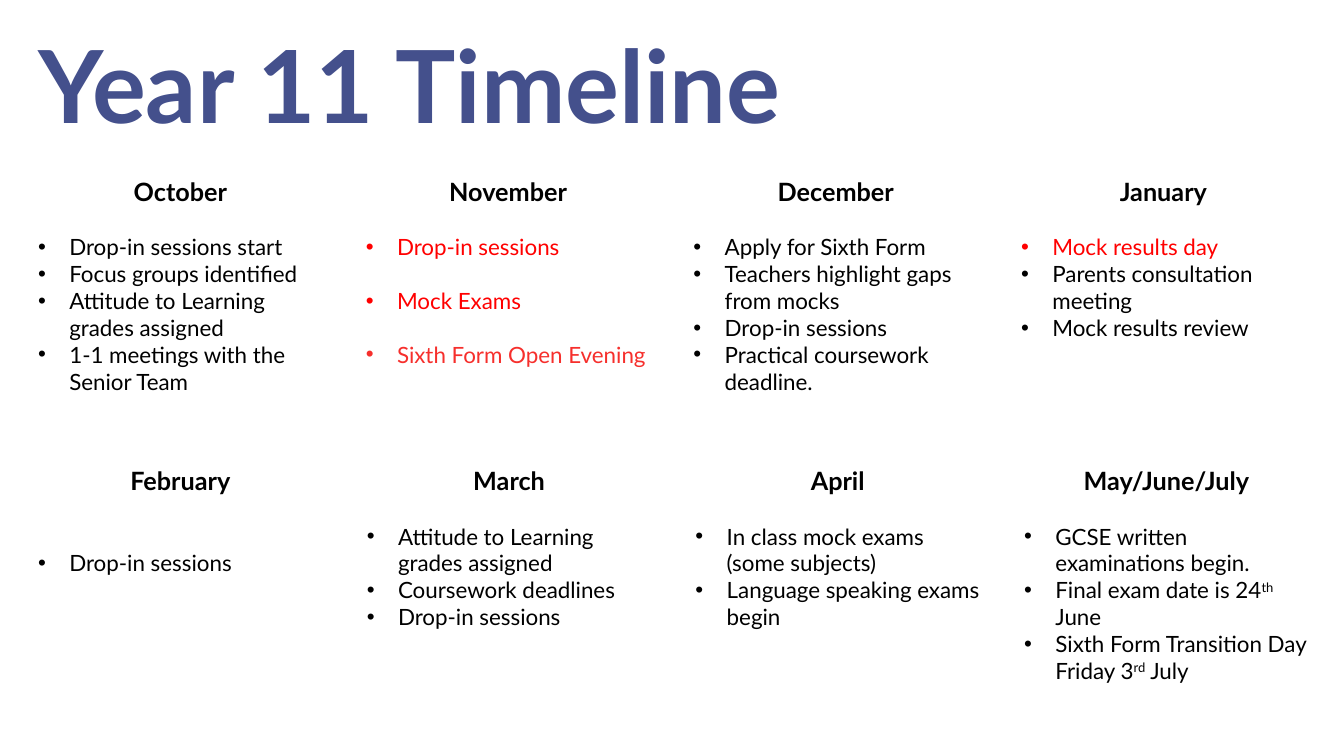
from dataclasses import dataclass

from lxml import etree
from pptx import Presentation
from pptx.dml.color import RGBColor
from pptx.enum.shapes import MSO_SHAPE
from pptx.enum.text import MSO_ANCHOR, PP_ALIGN
from pptx.oxml.ns import qn
from pptx.util import Inches, Pt

RECTANGLE = MSO_SHAPE.RECTANGLE
TOP, MIDDLE = MSO_ANCHOR.TOP, MSO_ANCHOR.MIDDLE
LEFT, CENTER = PP_ALIGN.LEFT, PP_ALIGN.CENTER


@dataclass(frozen=True)
class Theme:
    font: str = "Lato"
    title_color: str = "44508C"
    text_color: str = "000000"
    alert_color: str = "FF0000"
    event_color: str = "F62F2C"
    card_color: str = "FFFFFF"
    title_size: float = 72
    month_size: float = 18
    item_size: float = 16
    blank_line: float = 19.2


THEME = Theme()
MARGIN = 0.28
CARD_WIDTH = 3
BULLET_INDENT = 0.31


@dataclass
class Month:
    name: str
    items: list
    lines_above: int = 1
    lines_between: int = 0


ALERT, EVENT = THEME.alert_color, THEME.event_color
ROWS = [
    (1.7, 2.83, 3.25, [
        Month("October", ["Drop-in sessions start", "Focus groups identified",
                          "Attitude to Learning grades assigned",
                          "1-1 meetings with the Senior Team"]),
        Month("November", [("Drop-in sessions", ALERT), ("Mock Exams", ALERT),
                           ("Sixth Form Open Evening", EVENT)], lines_between=1),
        Month("December", ["Apply for Sixth Form", "Teachers highlight gaps from mocks",
                           "Drop-in sessions", "Practical coursework deadline."]),
        Month("January", [("Mock results day", ALERT), "Parents consultation meeting",
                          "Mock results review"]),
    ]),
    (4.57, 2.56, 3.26, [
        Month("February", ["Drop-in sessions"], lines_above=2),
        Month("March", ["Attitude to Learning grades assigned", "Coursework deadlines",
                        "Drop-in sessions"]),
        Month("April", ["In class mock exams (some subjects)",
                        "Language speaking exams begin"]),
        Month("May/June/July", ["GCSE written examinations begin.",
                                "Final exam date is 24^th^ June",
                                "Sixth Form Transition Day Friday 3^rd^ July"]),
    ]),
]


def write_text(paragraph, text, *, size, color, bold=False, align=LEFT,
               bullet=False, space_before=0, line_spacing=None):
    properties = paragraph._p.get_or_add_pPr()
    if bullet:
        properties.set("marL", str(Inches(BULLET_INDENT)))
        properties.set("indent", str(-Inches(BULLET_INDENT)))
        etree.SubElement(properties, qn("a:buFont")).set("typeface", "Arial")
        etree.SubElement(properties, qn("a:buChar")).set("char", "•")
    paragraph.alignment = align
    if space_before:
        paragraph.space_before = Pt(space_before)
    if line_spacing:
        paragraph.line_spacing = line_spacing
    for index, part in enumerate(text.split("^")):
        run = paragraph.add_run()
        run.text = part
        run.font.name = THEME.font
        run.font.size = Pt(size)
        run.font.bold = bold
        run.font.color.rgb = RGBColor.from_string(color)
        if index % 2:
            run._r.get_or_add_rPr().set("baseline", "30000")


class TimelineSlide:
    """Draws the title and month cards of the timeline on one slide."""

    def __init__(self, presentation, theme):
        self.theme = theme
        self.slide = presentation.slides.add_slide(presentation.slide_layouts[6])

    def add_title(self, text):
        shape = self.slide.shapes.add_textbox(
            Inches(MARGIN), Inches(0.28), Inches(12), Inches(1.25))
        frame = shape.text_frame
        frame.word_wrap = True
        frame.vertical_anchor = MIDDLE
        write_text(frame.paragraphs[0], text, size=self.theme.title_size,
                   color=self.theme.title_color, bold=True, line_spacing=0.9)

    def add_month(self, month, left, top, height):
        theme = self.theme
        shape = self.slide.shapes.add_shape(
            RECTANGLE, Inches(left), Inches(top), Inches(CARD_WIDTH), Inches(height))
        shape.shadow.inherit = False
        shape.fill.solid()
        shape.fill.fore_color.rgb = RGBColor.from_string(theme.card_color)
        shape.line.fill.background()
        frame = shape.text_frame
        frame.word_wrap = True
        frame.vertical_anchor = TOP
        frame.margin_right = Inches(0.08)
        write_text(frame.paragraphs[0], month.name, size=theme.month_size,
                   color=theme.text_color, bold=True, align=CENTER)
        for index, item in enumerate(month.items):
            text, color = (item, theme.text_color) if isinstance(item, str) else item
            lines = month.lines_between if index else month.lines_above
            write_text(frame.add_paragraph(), text, size=theme.item_size, color=color,
                       bullet=True, space_before=lines * theme.blank_line)


def main():
    presentation = Presentation()
    presentation.slide_width = Inches(13.33)
    presentation.slide_height = Inches(7.5)
    timeline = TimelineSlide(presentation, THEME)
    for top, height, pitch, months in ROWS:
        for column, month in enumerate(months):
            timeline.add_month(month, MARGIN + column * pitch, top, height)
    timeline.add_title("Year 11 Timeline")
    presentation.save("out.pptx")


if __name__ == "__main__":
    main()
